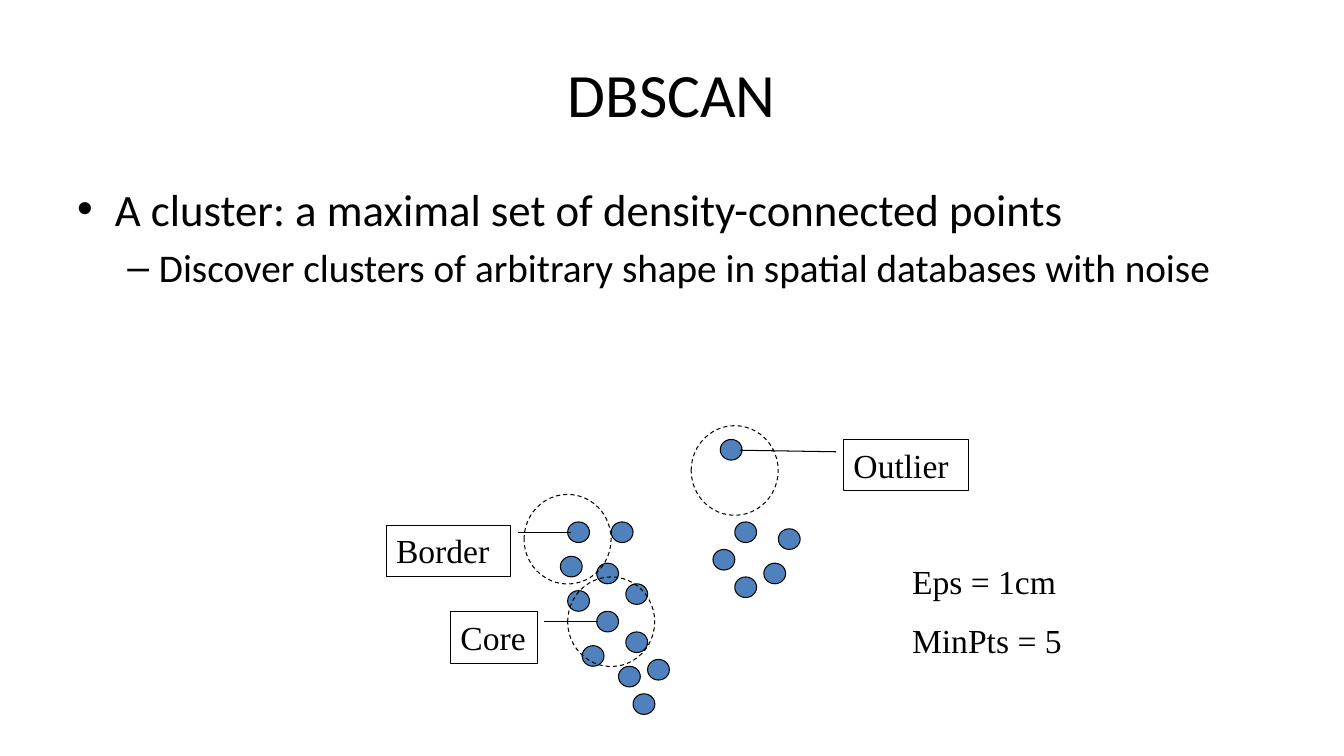
from pptx import Presentation
from pptx.dml.color import RGBColor as RGB
from pptx.enum.dml import MSO_LINE as Dash
from pptx.enum.shapes import MSO_SHAPE as Kind
from pptx.enum.text import MSO_ANCHOR as Anchor, PP_ALIGN as Align
from pptx.oxml.ns import qn
from pptx.util import Pt
from lxml.etree import SubElement as Sub

COLOR = {"ink": "000000", "dot": "4F81BD", "paper": "FFFFFF"}
SERIF = "Times New Roman"

deck = Presentation()
deck.slide_width, deck.slide_height = Pt(960), Pt(540)
slide = deck.slides.add_slide(deck.slide_layouts[6])
shapes = slide.shapes


def write(text, frame, size=24, font=SERIF, align=Align.LEFT, gap=0,
          bullet=None, left=0, hang=0, first=True):
    frame.word_wrap = True
    para = frame.paragraphs[0] if first else frame.add_paragraph()
    para.alignment = align
    para.space_before = Pt(gap)
    run = para.add_run()
    run.text = text
    run.font.size, run.font.name = Pt(size), font
    run.font.color.rgb = RGB.from_string(COLOR["ink"])
    if bullet:
        props = para._p.get_or_add_pPr()
        props.set("marL", str(Pt(left)))
        props.set("indent", str(Pt(-hang)))
        Sub(props, qn("a:buFont"), typeface="Arial")
        Sub(props, qn("a:buChar"), char=bullet)


def draw(kind, x, y, w, h, fill=None):
    shape = shapes.add_shape(kind, Pt(x), Pt(y), Pt(w), Pt(h))
    shape.shadow.inherit = False
    if fill:
        shape.fill.solid()
        shape.fill.fore_color.rgb = RGB.from_string(COLOR[fill])
    else:
        shape.fill.background()
    shape.line.color.rgb = RGB.from_string(COLOR["ink"])
    shape.line.width = Pt(0.75)
    return shape


title = shapes.add_textbox(Pt(48), Pt(21.6), Pt(864), Pt(90)).text_frame
title.vertical_anchor = Anchor.MIDDLE
write("DBSCAN", title, size=44, font="Calibri", align=Align.CENTER)

body = shapes.add_textbox(Pt(48), Pt(126), Pt(864), Pt(356.4)).text_frame
write("A cluster: a maximal set of density-connected points", body,
      size=32, font="Calibri", gap=6.4, bullet="•", left=27, hang=27)
write("Discover clusters of arbitrary shape in spatial databases with noise",
      body, size=28, font="Calibri", gap=5.6, bullet="–", left=58.5,
      hang=22.5, first=False)

LEFT, TOP, COL, ROW = 400.3, 313.9, 5.19, 4.91
dots = [(1, 12), (0, 17), (5, 18), (7, 12), (9, 21), (1, 22), (5, 25),
        (3, 30), (8, 33), (10, 37), (9, 28), (12, 32),
        (22, 0), (24, 12), (21, 16), (28, 18), (30, 13), (24, 20)]
for col, row in dots:
    draw(Kind.OVAL, LEFT + col * COL, TOP + row * ROW, 15.6, 14.7, "dot")

for col, row in [(-5, 8), (1, 20), (18, -2)]:
    ring = draw(Kind.OVAL, LEFT + col * COL, TOP + row * ROW, 62.2, 64)
    ring.line.dash_style = Dash.DASH

labels = [
    ("Core", 321.8, 437, 62.2, (0.19, 1.08, 0.19, 1.69)),
    ("Border", 275.8, 375.1, 88.6, (0.14, 1.06, 0.14, 1.49)),
    ("Outlier", 602.6, 313.9, 89.3, (0.24, -0.06, 0.21, -0.83)),
]
for name, x, y, w, line in labels:
    label = draw(Kind.LINE_CALLOUT_1, x, y, w, 36.7, "paper")
    for i, value in enumerate(line):
        label.adjustments[i] = value
    label.text_frame.vertical_anchor = Anchor.TOP
    write(name, label.text_frame)

notes = shapes.add_textbox(Pt(644.4), Pt(397.4), Pt(129.6), Pt(80)).text_frame
write("Eps = 1cm", notes, gap=13)
write("MinPts = 5", notes, gap=13, first=False)

deck.save("out.pptx")
